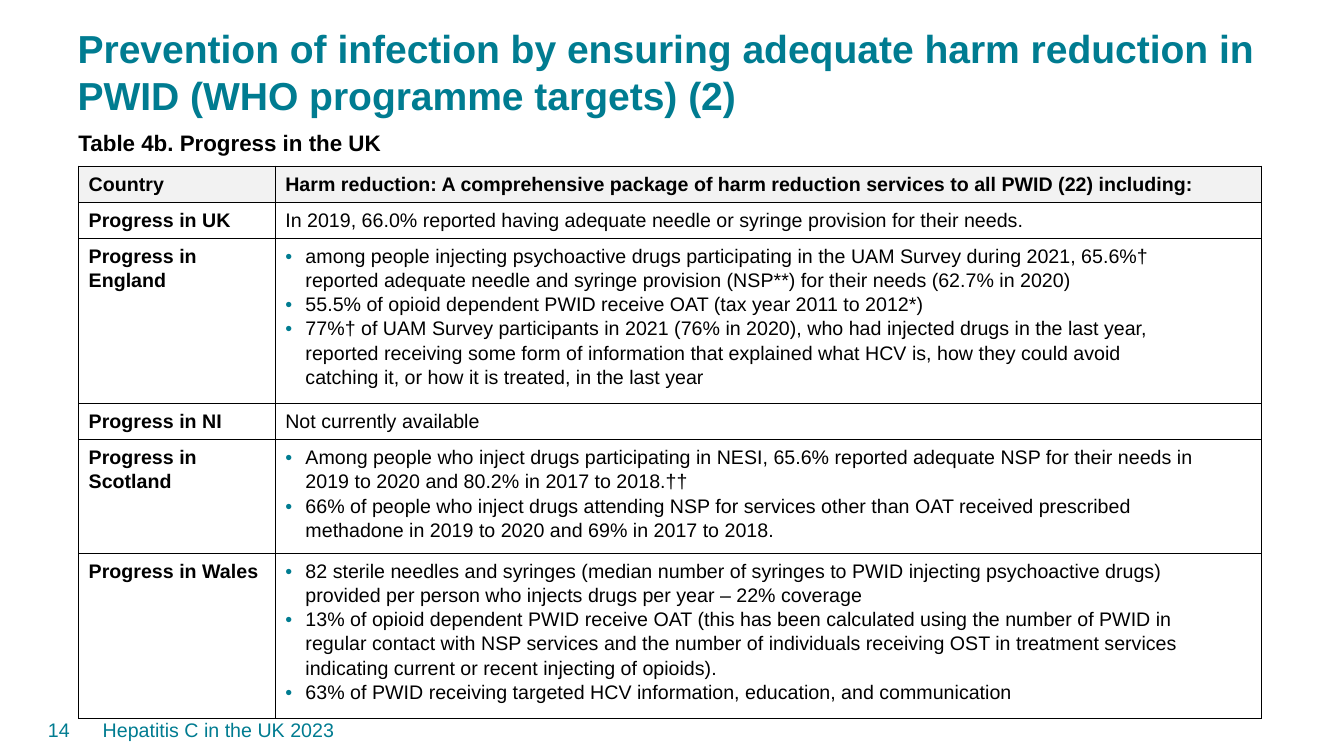
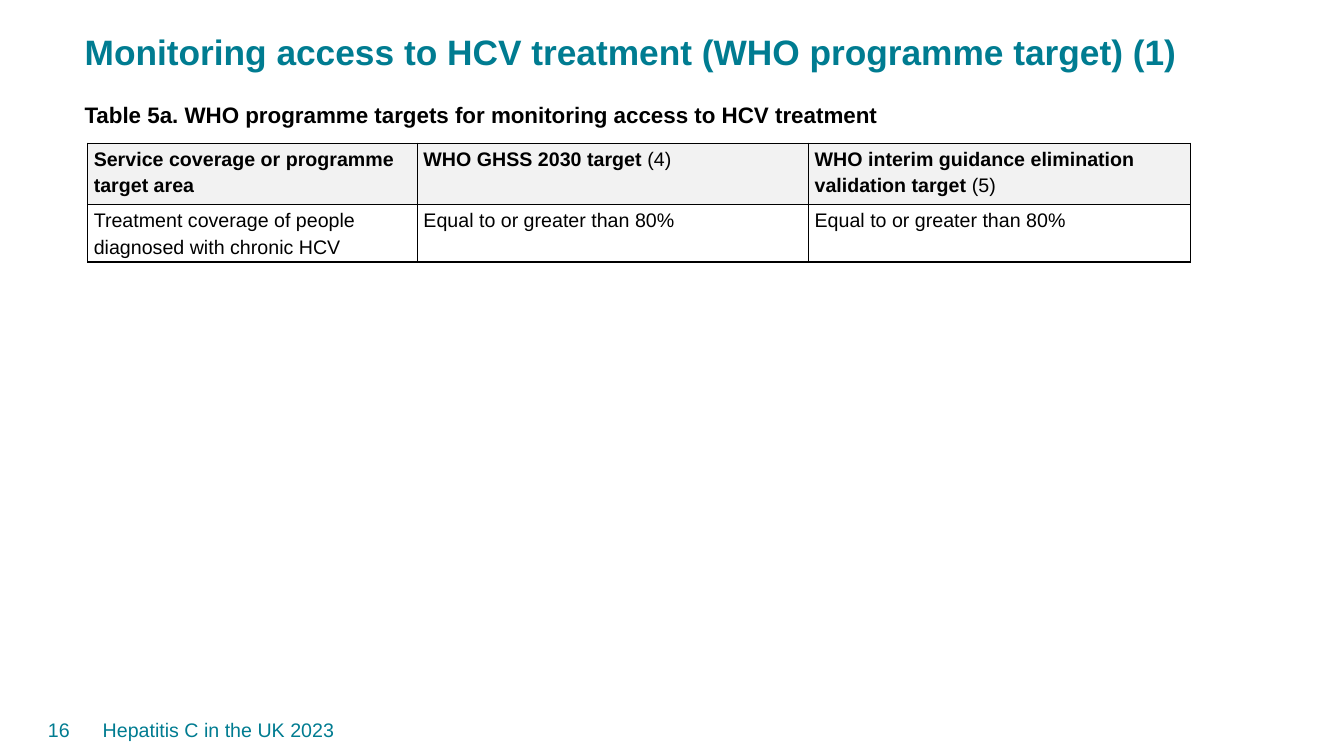
import pptx
import pptx.dml.color
import pptx.enum.text
import pptx.oxml
import pptx.oxml.ns
import pptx.util

PX = 9144  # 100 px to the inch
FONT = "Arial"
TEAL = pptx.dml.color.RGBColor(0x00, 0x7C, 0x91)
BLACK = pptx.dml.color.RGBColor(0x00, 0x00, 0x00)
WHITE = pptx.dml.color.RGBColor(0xFF, 0xFF, 0xFF)
HEADER_GREY = pptx.dml.color.RGBColor(0xF2, 0xF2, 0xF2)
BODY_SIZE = 14
CAPTION_SIZE = 16
BULLET_INDENT = 20
BULLET_RIGHT_MARGIN = 65
FOOTER = "Hepatitis C in the UK 2023"
NAMESPACE = pptx.oxml.ns.nsdecls("a")

# Table cells: a string, a list of bullets, or a (bold, regular) pair
SLIDES = [
    {
        "number": "14",
        "title": "Prevention of infection by ensuring adequate harm reduction in PWID (WHO programme targets) (2)",
        "title_box": (67, 19, 1217, 121),
        "title_size": 27.9,
        "title_spacing": 1.0,
        "caption": "Table 4b. Progress in the UK",
        "caption_box": (68, 130, 738, 31),
        "caption_spacing": pptx.util.Pt(14),
        "table_corner": (78, 165),
        "columns": [195, 978],
        "row_heights": [34, 34, 153, 34, 106, 153],
        "margins": (10, 5, 10, 5),
        "line_spacing": 1.1,
        "bold_first_column": True,
        "rows": [
            ["Country",
             "Harm reduction: A comprehensive package of harm reduction services to all PWID (22) including:"],
            ["Progress in UK",
             "In 2019, 66.0% reported having adequate needle or syringe provision for their needs."],
            ["Progress in England", [
                "among people injecting psychoactive drugs participating in the UAM Survey during 2021, 65.6%† "
                "reported adequate needle and syringe provision (NSP**) for their needs (62.7% in 2020)",
                "55.5% of opioid dependent PWID receive OAT (tax year 2011 to 2012*)",
                "77%† of UAM Survey participants in 2021 (76% in 2020), who had injected drugs in the last year, "
                "reported receiving some form of information that explained what HCV is, how they could avoid "
                "catching it, or how it is treated, in the last year"]],
            ["Progress in NI", "Not currently available"],
            ["Progress in Scotland", [
                "Among people who inject drugs participating in NESI, 65.6% reported adequate NSP for their needs "
                "in 2019 to 2020 and 80.2% in 2017 to 2018.††",
                "66% of people who inject drugs attending NSP for services other than OAT received prescribed "
                "methadone in 2019 to 2020 and 69% in 2017 to 2018."]],
            ["Progress in Wales", [
                "82 sterile needles and syringes (median number of syringes to PWID injecting psychoactive drugs) "
                "provided per person who injects drugs per year – 22% coverage",
                "13% of opioid dependent PWID receive OAT (this has been calculated using the number of PWID in "
                "regular contact with NSP services and the number of individuals receiving OST in treatment "
                "services indicating current or recent injecting of opioids).",
                "63% of PWID receiving targeted HCV information, education, and communication"]],
        ],
    },
    {
        "number": "16",
        "title": "Monitoring access to HCV treatment (WHO programme target) (1)",
        "title_box": (74, 30, 1217, 56),
        "title_size": 25.2,
        "title_spacing": 0.9,
        "caption": "Table 5a. WHO programme targets for monitoring access to HCV treatment",
        "caption_box": (74, 95, 984, 37),
        "caption_spacing": 1.0,
        "table_corner": (87, 142),
        "columns": [327, 388, 379],
        "row_heights": [61, 54],
        "margins": (6, 1, 6, 0),
        "line_spacing": 1.2,
        "bold_first_column": False,
        "rows": [
            ["Service coverage or programme target area",
             ("WHO GHSS 2030 target ", "(4)"),
             ("WHO interim guidance elimination validation target ", "(5)")],
            ["Treatment coverage of people diagnosed with chronic HCV",
             "Equal to or greater than 80%",
             "Equal to or greater than 80%"],
        ],
    },
]


def format_runs(paragraph, size, color, bold=False):
    for run in paragraph.runs:
        run.font.name = FONT
        run.font.size = pptx.util.Pt(size)
        run.font.color.rgb = color
        run.font.bold = bold


def add_text(slide, box, text, size, color, bold=False):
    shape = slide.shapes.add_textbox(*[length * PX for length in box])
    shape.text_frame.word_wrap = True
    shape.text_frame.text = text
    paragraph = shape.text_frame.paragraphs[0]
    format_runs(paragraph, size, color, bold)
    return shape.text_frame, paragraph


presentation = pptx.Presentation()
presentation.slide_width = 1333 * PX
presentation.slide_height = 750 * PX
title_only = presentation.slide_layouts[5]

for content in SLIDES:
    slide = presentation.slides.add_slide(title_only)

    # Title
    title = slide.shapes.title
    title.left, title.top, title.width, title.height = [length * PX for length in content["title_box"]]
    title.text_frame.text = content["title"]
    title.text_frame.auto_size = pptx.enum.text.MSO_AUTO_SIZE.NONE
    title.text_frame.vertical_anchor = pptx.enum.text.MSO_ANCHOR.TOP
    paragraph = title.text_frame.paragraphs[0]
    paragraph.alignment = pptx.enum.text.PP_ALIGN.LEFT
    paragraph.line_spacing = content["title_spacing"]
    format_runs(paragraph, content["title_size"], TEAL, True)

    # Table caption
    text_frame, paragraph = add_text(slide, content["caption_box"], content["caption"], CAPTION_SIZE, BLACK, True)
    paragraph.line_spacing = content["caption_spacing"]

    # Table grid
    rows, columns, heights = content["rows"], content["columns"], content["row_heights"]
    left, top = content["table_corner"]
    table = slide.shapes.add_table(
        len(rows), len(columns), left * PX, top * PX, sum(columns) * PX, sum(heights) * PX).table
    table.horz_banding = False
    for column, width in zip(table.columns, columns):
        column.width = width * PX
    for row, height in zip(table.rows, heights):
        row.height = height * PX

    # Table cells
    for row_index, row in enumerate(rows):
        for column_index, entry in enumerate(row):
            cell = table.cell(row_index, column_index)
            bulleted = isinstance(entry, list)
            cell.margin_left, cell.margin_top, cell.margin_right, cell.margin_bottom = [
                length * PX for length in content["margins"]]
            if bulleted:
                cell.margin_right = BULLET_RIGHT_MARGIN * PX
            cell_properties = cell._tc.get_or_add_tcPr()
            for side in ("lnL", "lnR", "lnT", "lnB"):
                cell_properties.append(pptx.oxml.parse_xml(
                    f'<a:{side} {NAMESPACE} w="{pptx.util.Pt(1)}"><a:solidFill>'
                    f'<a:srgbClr val="{BLACK}"/></a:solidFill></a:{side}>'))
            cell.fill.solid()
            cell.fill.fore_color.rgb = HEADER_GREY if row_index == 0 else WHITE

            bold = row_index == 0 or (content["bold_first_column"] and column_index == 0)
            main_text, regular_text = entry if isinstance(entry, tuple) else (entry, "")
            cell.text_frame.text = "\n".join(entry) if bulleted else main_text
            for paragraph in cell.text_frame.paragraphs:
                if bulleted:
                    properties = paragraph._p.get_or_add_pPr()
                    properties.set("marL", str(BULLET_INDENT * PX))
                    properties.set("indent", str(-BULLET_INDENT * PX))
                    for bullet in (f'<a:buClr {NAMESPACE}><a:srgbClr val="{TEAL}"/></a:buClr>',
                                   f'<a:buFont {NAMESPACE} typeface="{FONT}"/>',
                                   f'<a:buChar {NAMESPACE} char="•"/>'):
                        properties.append(pptx.oxml.parse_xml(bullet))
                paragraph.line_spacing = content["line_spacing"]
                if regular_text:
                    paragraph.add_run().text = regular_text
                format_runs(paragraph, BODY_SIZE, BLACK, bold)
                if regular_text:
                    paragraph.runs[-1].font.bold = False

    # Footer and page number
    for box, text, alignment in (
            ((92, 704, 1094, 40), FOOTER, pptx.enum.text.PP_ALIGN.LEFT),
            ((14, 704, 65, 40), content["number"], pptx.enum.text.PP_ALIGN.RIGHT)):
        text_frame, paragraph = add_text(slide, box, text, BODY_SIZE, TEAL)
        text_frame.vertical_anchor = pptx.enum.text.MSO_ANCHOR.MIDDLE
        paragraph.alignment = alignment

presentation.save("out.pptx")
